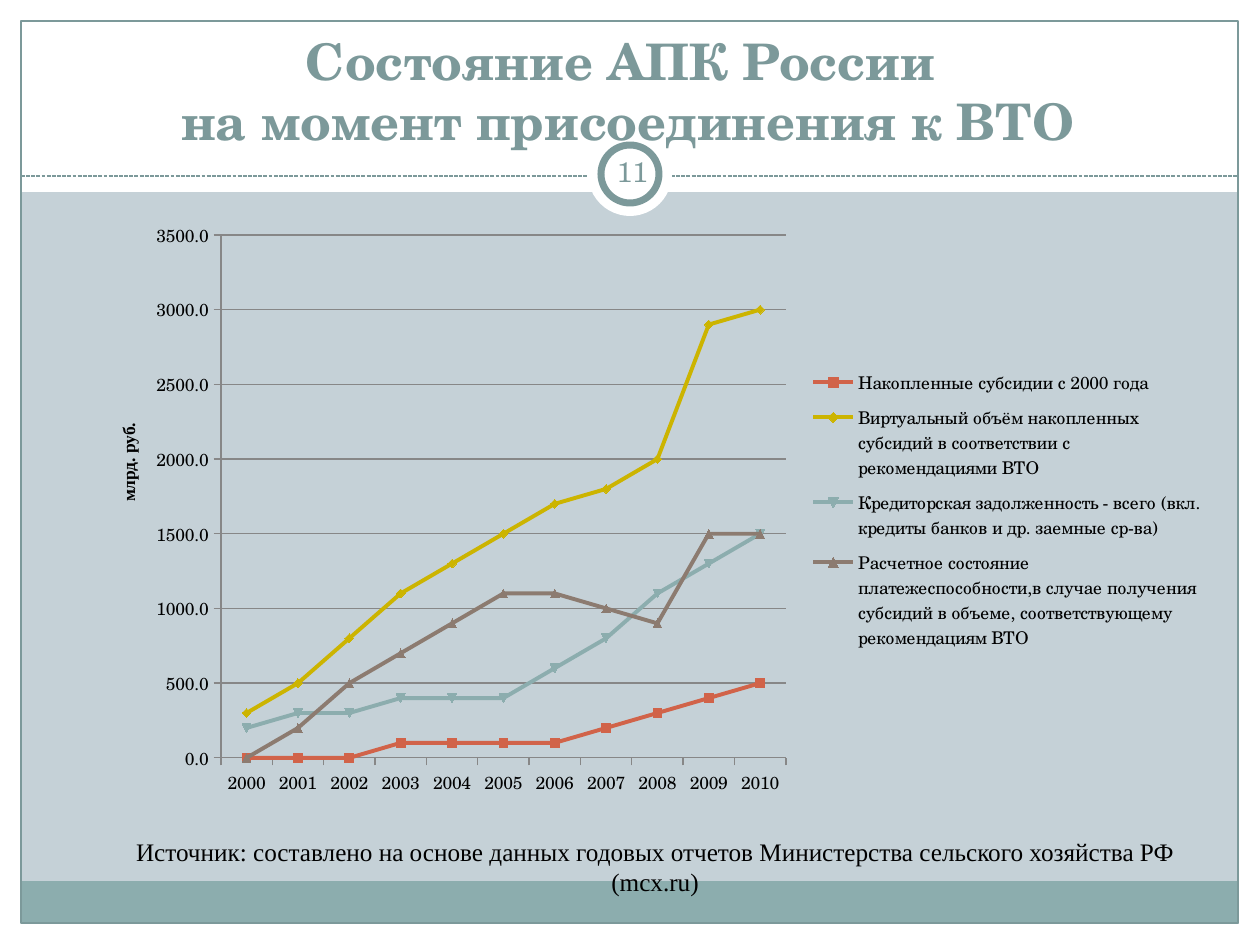
from lxml import etree
from pptx import Presentation
from pptx.chart.data import CategoryChartData
from pptx.dml.color import RGBColor
from pptx.enum.chart import XL_CHART_TYPE, XL_LEGEND_POSITION, XL_TICK_MARK
from pptx.enum.dml import MSO_LINE
from pptx.enum.shapes import MSO_CONNECTOR, MSO_SHAPE
from pptx.enum.text import MSO_ANCHOR, MSO_AUTO_SIZE, PP_ALIGN
from pptx.oxml import parse_xml
from pptx.oxml.ns import nsdecls, qn
from pptx.util import Pt

RECT, OVAL = MSO_SHAPE.RECTANGLE, MSO_SHAPE.OVAL
CENTER, MIDDLE, BOTTOM = PP_ALIGN.CENTER, MSO_ANCHOR.MIDDLE, MSO_ANCHOR.BOTTOM
OUTSIDE = XL_TICK_MARK.OUTSIDE
EMU_PER_PX = 914400 / 126
SERIF, TIMES = "TeX Gyre Schola", "Times New Roman"
WHITE, TEAL, SAGE, BLACK, GRID = "FFFFFF", "8CADAE", "7C999A", "000000", "878787"
TITLE_ONLY = 5

FRAMES = [
    (RECT, (0, 924, 1260, 21), WHITE, None, 0),
    (RECT, (0, 0, 1260, 192), WHITE, None, 0),
    (RECT, (0, 0, 21, 945), WHITE, None, 0),
    (RECT, (1239, 0, 21, 945), WHITE, None, 0),
    (RECT, (21, 881, 1217, 43), TEAL, None, 0),
    (RECT, (21, 21, 1217, 902), None, SAGE, 0.75),
]
RINGS = [
    (OVAL, (588, 132, 84, 84), WHITE, None, 0),
    (OVAL, (601, 145, 58, 58), WHITE, SAGE, 4),
]
YEARS = [str(year) for year in range(2000, 2011)]
SERIES = [
    ("Накопленные субсидии с 2000 года", "D16349",
     (0, 0, 0, 100, 100, 100, 100, 200, 300, 400, 500)),
    ("Виртуальный объём накопленных субсидий в соответствии с рекомендациями ВТО",
     "CCB400", (300, 500, 800, 1100, 1300, 1500, 1700, 1800, 2000, 2900, 3000)),
    ("Кредиторская задолженность - всего (вкл. кредиты банков и др. заемные ср-ва)",
     TEAL, (200, 300, 300, 400, 400, 400, 600, 800, 1100, 1300, 1500)),
    ("Расчетное состояние платежеспособности,в случае получения субсидий в объеме, "
     "соответствующему рекомендациям ВТО", "8C7B70",
     (0, 200, 500, 700, 900, 1100, 1100, 1000, 900, 1500, 1500)),
]


def px(n):
    return round(n * EMU_PER_PX)


def rgb(value):
    return RGBColor.from_string(value)


def set_font(font, size, name=SERIF, color=BLACK, bold=False):
    values = {"size": Pt(size), "name": name, "bold": bold}
    for key, value in values.items():
        setattr(font, key, value)
    font.color.rgb = rgb(color)


def set_line(line, color, width):
    line.color.rgb = rgb(color)
    line.width = Pt(width)


def add_block(slide, kind, box, fill, line, width):
    sp = slide.shapes.add_shape(kind, *map(px, box))
    sp.shadow.inherit = False
    if fill:
        sp.fill.solid()
        sp.fill.fore_color.rgb = rgb(fill)
    else:
        sp.fill.background()
    if line:
        set_line(sp.line, line, width)
    else:
        sp.line.fill.background()


def add_rule(slide, left, right, y):
    rule = slide.shapes.add_connector(MSO_CONNECTOR.STRAIGHT, *map(px, (left, y, right, y)))
    set_line(rule.line, SAGE, 0.75)
    rule.line.dash_style = MSO_LINE.SQUARE_DOT
    etree.SubElement(rule._element.spPr, qn("a:effectLst"))


def write_text(sp, text, anchor, **font):
    tf = sp.text_frame
    tf.text = text
    values = {"word_wrap": True, "auto_size": MSO_AUTO_SIZE.NONE, "vertical_anchor": anchor}
    for key, value in values.items():
        setattr(tf, key, value)
    for p in tf.paragraphs:
        p.alignment = CENTER
        for r in p.runs:
            set_font(r.font, **font)
    return tf


def add_title(slide, box, text):
    title = slide.shapes.title
    title.left, title.top, title.width, title.height = map(px, box)
    write_text(title, text, BOTTOM, size=28.8, color=SAGE, bold=True)
    slide.shapes._spTree.append(title._element)


def add_label(slide, box, text, inset=None, **font):
    sp = slide.shapes.add_textbox(*map(px, box))
    tf = write_text(sp, text, MIDDLE, **font)
    if inset is not None:
        for side in ("left", "top", "right", "bottom"):
            setattr(tf, f"margin_{side}", px(inset))


def make_layout(frame, box, inner=False):
    """Return a manual layout placing box, in slide px, within the chart frame."""
    left, top, width, height = frame
    x, y, w, h = box
    parts = {"xMode": "edge", "yMode": "edge", "x": (x - left) / width,
             "y": (y - top) / height, "w": w / width, "h": h / height}
    if inner:
        parts = {"layoutTarget": "inner", **parts}
    body = "".join(f'<c:{key} val="{value}"/>' for key, value in parts.items())
    return parse_xml(f'<c:layout {nsdecls("c")}><c:manualLayout>{body}'
                     '</c:manualLayout></c:layout>')


def replace_layout(parent, layout, index):
    for old in parent.findall(qn("c:layout")):
        parent.remove(old)
    parent.insert(index, layout)


def format_axes(chart, title_layout):
    value_axis = chart.value_axis
    for axis in (chart.category_axis, value_axis):
        axis.major_tick_mark = OUTSIDE
        set_line(axis.format.line, GRID, 0.75)
    value_axis.minimum_scale, value_axis.maximum_scale = 0, 3500
    value_axis.major_unit = 500
    value_axis.tick_labels.number_format = "0.0"
    value_axis.tick_labels.number_format_is_linked = False
    set_line(value_axis.major_gridlines.format.line, GRID, 0.75)
    title = value_axis.axis_title
    title.text_frame.text = "млрд. руб."
    set_font(title.text_frame.paragraphs[0].runs[0].font, 10, TIMES, bold=True)
    replace_layout(title._element, title_layout, 1)


def add_line_chart(slide, frame, plot_box, legend_box, axis_title_box):
    data = CategoryChartData(number_format="0.0")
    data.categories = YEARS
    for name, _, values in SERIES:
        data.add_series(name, values)
    chart = slide.shapes.add_chart(XL_CHART_TYPE.LINE_MARKERS, *map(px, frame), data).chart
    chart.has_title = False
    set_font(chart.font, 10)
    format_axes(chart, make_layout(frame, axis_title_box))
    chart.has_legend = True
    chart.legend.position = XL_LEGEND_POSITION.RIGHT
    chart.legend.include_in_layout = False
    replace_layout(chart.legend._element, make_layout(frame, legend_box), 1)
    plot_area = chart._chartSpace.chart.plotArea
    replace_layout(plot_area, make_layout(frame, plot_box, inner=True), 0)
    chart.plots[0].vary_by_categories = False
    for series, (_, color, _) in zip(chart.plots[0].series, SERIES):
        series.smooth = False
        set_line(series.format.line, color, 2.25)
        marker = series.marker
        marker.size = 5
        marker.format.fill.solid()
        marker.format.fill.fore_color.rgb = rgb(color)
        set_line(marker.format.line, color, 0.75)


def main():
    prs = Presentation()
    prs.slide_width, prs.slide_height = px(1260), px(945)
    slide = prs.slides.add_slide(prs.slide_layouts[TITLE_ONLY])
    slide.background.fill.solid()
    slide.background.fill.fore_color.rgb = rgb("C5D1D7")
    for block in FRAMES:
        add_block(slide, *block)
    add_rule(slide, 21, 1239, 176)
    for ring in RINGS:
        add_block(slide, *ring)
    add_title(slide, (59, 29, 1138, 128), "Состояние АПК России \vна момент присоединения к ВТО")
    add_label(slide, (601, 141, 63, 61), "11", inset=6, size=16, color=SAGE)
    add_label(slide, (79, 837, 1152, 59),
              "Источник: составлено на основе данных годовых отчетов "
              "Министерства сельского хозяйства РФ (mcx.ru)", size=14.4, name=TIMES)
    add_line_chart(slide, frame=(78, 210, 1135, 597), plot_box=(221, 235, 565, 523),
                   legend_box=(810, 360, 394, 300), axis_title_box=(114, 420, 18, 81))
    prs.save("out.pptx")


if __name__ == "__main__":
    main()
